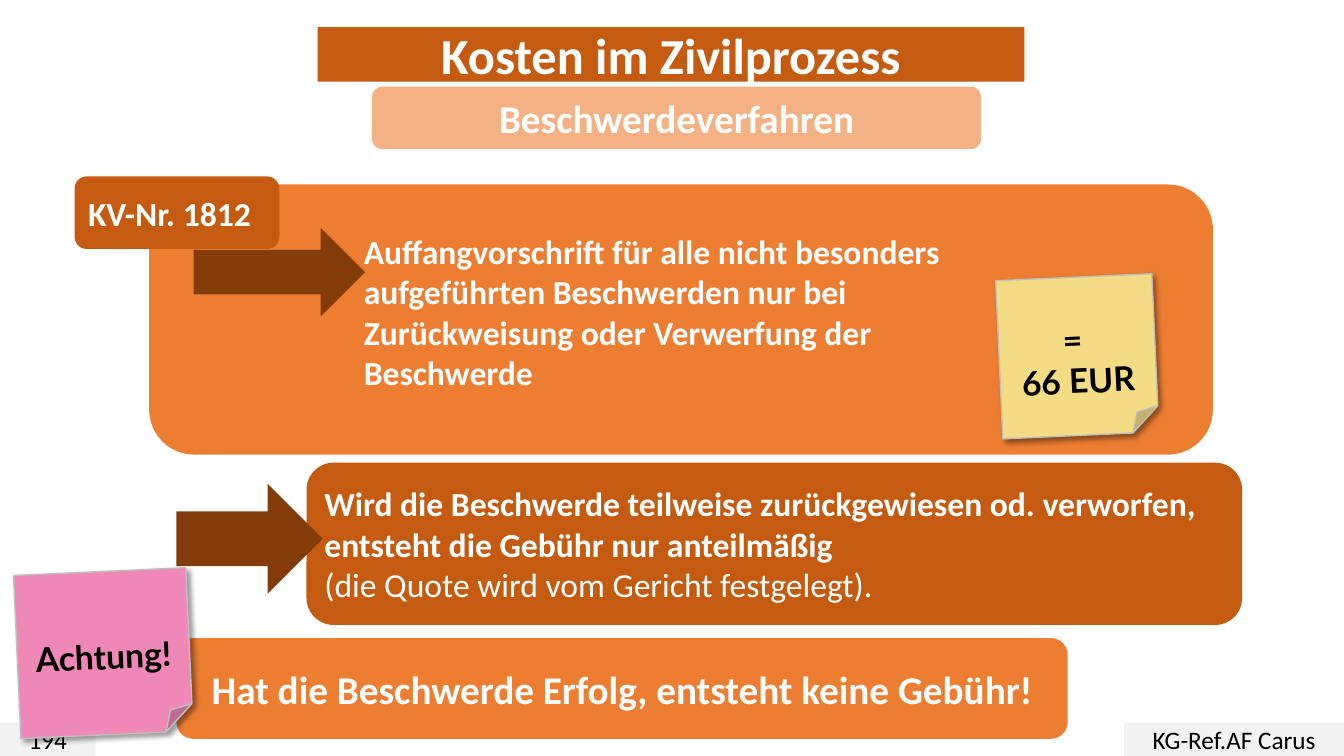
from dataclasses import dataclass
from lxml import etree
from pptx import Presentation
from pptx.dml.color import RGBColor
from pptx.enum.shapes import MSO_SHAPE
from pptx.enum.text import MSO_ANCHOR, MSO_AUTO_SIZE, PP_ALIGN
from pptx.oxml.ns import qn
from pptx.util import Inches, Pt

RECT, ROUND = MSO_SHAPE.RECTANGLE, MSO_SHAPE.ROUNDED_RECTANGLE
ARROW, NOTE = MSO_SHAPE.RIGHT_ARROW, MSO_SHAPE.FOLDED_CORNER
LEFT, CENTER = PP_ALIGN.LEFT, PP_ALIGN.CENTER
MIDDLE, TOP = MSO_ANCHOR.MIDDLE, MSO_ANCHOR.TOP
TITLE_ONLY = 5


@dataclass(frozen=True)
class Theme:
    font: str = "Calibri"
    note_font: str = "Lato"
    white: str = "FFFFFF"
    black: str = "000000"
    gray: str = "F2F2F2"
    note_line: str = "BFBFBF"
    yellow: str = "F4DC84"
    pink: str = "F088B7"
    pale: str = "F4B183"
    orange: str = "ED7D31"
    dark: str = "C55A11"
    brown: str = "843C0B"
    title: int = 36
    heading: int = 28
    body: int = 24
    footer: int = 18


T = Theme()

# Content: boxes are left, top, width, height in inches
TITLE = ("Kosten im Zivilprozess", (3.15, 0.27, 7.01, 0.54))
SUBTITLE = ("Beschwerdeverfahren", (3.69, 0.86, 6.04, 0.62))
FOOTERS = [
    ("194", (0, 7.17, 0.95, 0.33)),
    ("KG-Ref.AF Carus", (11.15, 7.17, 2.18, 0.33)),
]
PARTIAL = [
    ("Wird die Beschwerde teilweise zurückgewiesen od. verworfen, "
     "entsteht die Gebühr nur anteilmäßig", True),
    ("(die Quote wird vom Gericht festgelegt).", False),
]
RULE_NUMBER = "KV-Nr. 1812"
RULE = ("Auffangvorschrift für alle nicht besonders aufgeführten Beschwerden "
        "nur bei Zurückweisung oder Verwerfung der Beschwerde")
SUCCESS = "Hat die Beschwerde Erfolg, entsteht keine Gebühr!"
FEE = [("= ", True), ("66 EUR", True)]
WARNING = [("Achtung!", True)]
NOTE_ANGLE = 357.4
NOTE_TOP_MARGIN = 0.38


def rgb(value):
    return RGBColor.from_string(value)


def paint(s, fill):
    s.fill.solid()
    s.fill.fore_color.rgb = rgb(fill)
    s.line.fill.background()
    s.shadow.inherit = False


def write(s, paragraphs, size, color=T.white, font=T.font, align=CENTER, anchor=MIDDLE):
    """Fill a shape with (text, bold) paragraphs."""
    tf = s.text_frame
    tf.word_wrap = True
    tf.auto_size = MSO_AUTO_SIZE.NONE
    tf.vertical_anchor = anchor
    for i, (text, bold) in enumerate(paragraphs):
        p = tf.add_paragraph() if i else tf.paragraphs[0]
        p.alignment = align
        r = p.add_run()
        r.text = text
        r.font.name, r.font.size, r.font.bold = font, Pt(size), bold
        r.font.color.rgb = rgb(color)


def add_box(shapes, kind, box, fill):
    s = shapes.add_shape(kind, *map(Inches, box))
    paint(s, fill)
    return s


def add_note(shapes, box, fill, paragraphs):
    """Tilted sticky note with a soft shadow."""
    s = add_box(shapes, NOTE, box, fill)
    s.rotation = NOTE_ANGLE
    s.line.color.rgb = rgb(T.note_line)
    s.line.width = Pt(1)
    effects = s._element.spPr.find(qn("a:effectLst"))
    shadow = etree.SubElement(effects, qn("a:outerShdw"), blurRad=str(Pt(4)),
                              dist=str(Pt(3)), dir="2700000", algn="tl", rotWithShape="0")
    color = etree.SubElement(shadow, qn("a:srgbClr"), val=T.black)
    etree.SubElement(color, qn("a:alpha"), val="40000")
    write(s, paragraphs, T.body, T.black, T.note_font)
    s.text_frame.margin_top = Inches(NOTE_TOP_MARGIN)


def add_title(slide):
    """Turn the title placeholder into a rounded bar."""
    text, box = TITLE
    s = slide.shapes.title
    s.left, s.top, s.width, s.height = map(Inches, box)
    geometry = etree.Element(qn("a:prstGeom"), prst="roundRect")
    etree.SubElement(geometry, qn("a:avLst"))
    s._element.spPr.find(qn("a:xfrm")).addnext(geometry)
    s.fill.solid()
    s.fill.fore_color.rgb = rgb(T.dark)
    write(s, [(text, True)], T.title)


def main():
    prs = Presentation()
    prs.slide_width, prs.slide_height = Inches(13.33), Inches(7.5)
    slide = prs.slides.add_slide(prs.slide_layouts[TITLE_ONLY])
    shapes = slide.shapes

    # Title, subtitle and footer
    add_title(slide)
    for text, box in FOOTERS:
        write(add_box(shapes, RECT, box, T.gray), [(text, False)], T.footer, T.black)
    text, box = SUBTITLE
    write(add_box(shapes, ROUND, box, T.pale), [(text, True)], T.heading)

    # Partial rejection
    partial = shapes.add_group_shape().shapes
    s = add_box(partial, ROUND, (3.04, 4.59, 9.28, 1.61), T.dark)
    write(s, PARTIAL, T.body, align=LEFT)
    add_box(partial, ARROW, (1.75, 4.8, 1.45, 1.09), T.brown)

    # Fee rule with its number and amount
    rule = shapes.add_group_shape().shapes
    add_box(rule, ROUND, (1.48, 1.83, 10.55, 2.68), T.orange)
    add_box(rule, ARROW, (1.92, 2.26, 1.7, 0.88), T.brown)
    s = add_box(rule, ROUND, (0.74, 1.75, 2.03, 0.72), T.dark)
    write(s, [(RULE_NUMBER, True)], T.body, align=LEFT)
    s = rule.add_textbox(*map(Inches, (3.51, 2.24, 6.67, 2.05)))
    write(s, [(RULE, True)], T.body, align=LEFT, anchor=TOP)
    add_note(shapes, (9.91, 2.75, 1.55, 1.57), T.yellow, FEE)

    # Successful complaint
    s = add_box(shapes, ROUND, (1.75, 6.33, 8.84, 1), T.orange)
    write(s, [(SUCCESS, True)], T.heading)
    add_note(shapes, (0.17, 5.67, 1.71, 1.62), T.pink, WARNING)

    prs.save("out.pptx")


if __name__ == "__main__":
    main()
